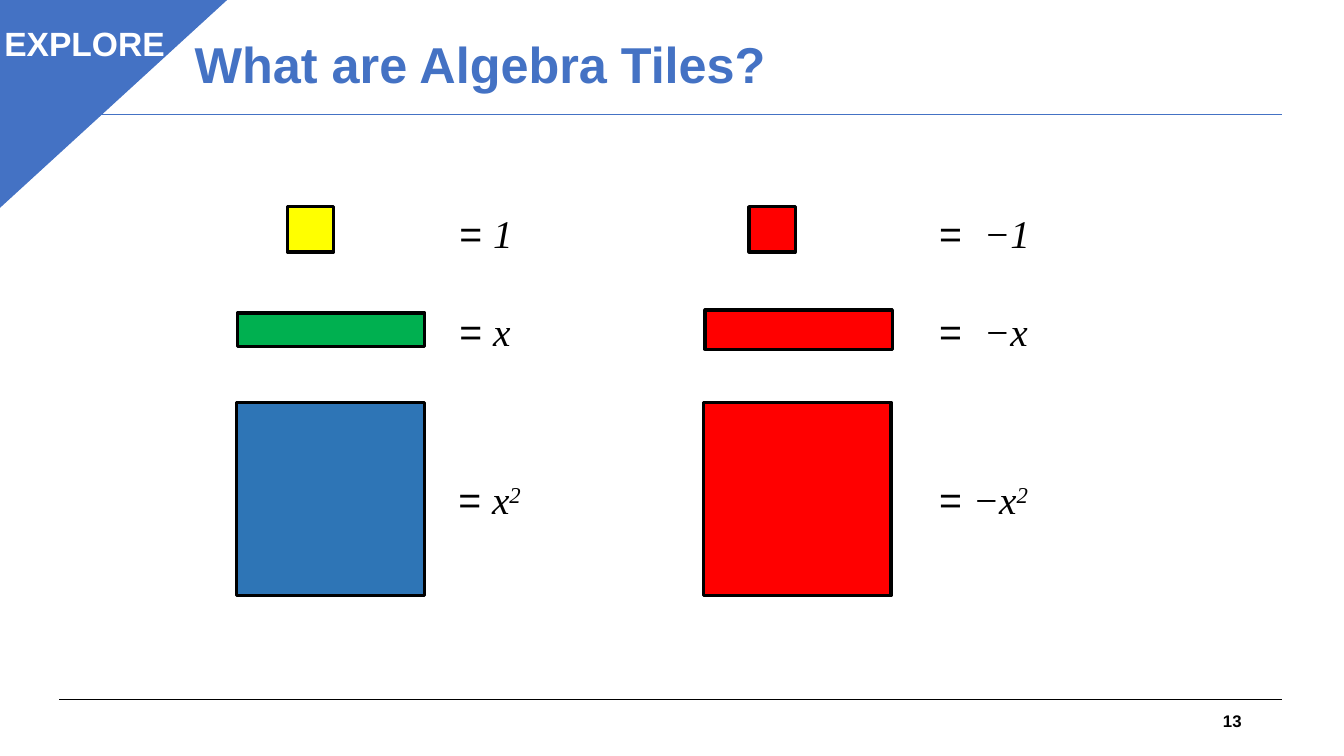
from lxml import etree
from pptx import Presentation
from pptx.dml.color import RGBColor
from pptx.enum import shapes, text
from pptx.oxml import ns
from pptx.util import Pt

COLORS = {
    "accent": "4472C4",
    "black": "000000",
    "white": "FFFFFF",
    "yellow": "FFFF00",
    "green": "00B050",
    "blue": "2E75B6",
    "red": "FF0000",
}
RECT = shapes.MSO_SHAPE.RECTANGLE
CORNER = shapes.MSO_SHAPE.RIGHT_TRIANGLE


def rgb(color):
    return RGBColor.from_string(COLORS[color])


def style_font(font, size, color, name=None, bold=None):
    font.size = Pt(size)
    font.color.rgb = rgb(color)
    font.name = name
    font.bold = bold


def add_rule(slide, left, right, y, color):
    rule = slide.shapes.add_connector(
        shapes.MSO_CONNECTOR.STRAIGHT, Pt(left), Pt(y), Pt(right), Pt(y))
    rule.line.color.rgb = rgb(color)
    rule.line.width = Pt(0.75)
    etree.SubElement(rule._element.spPr, ns.qn("a:effectLst"))


def add_block(slide, kind, box, fill, border, border_width):
    block = slide.shapes.add_shape(kind, *map(Pt, box))
    block.shadow.inherit = False
    block.fill.solid()
    block.fill.fore_color.rgb = rgb(fill)
    block.line.color.rgb = rgb(border)
    block.line.width = Pt(border_width)
    return block


def add_text_box(slide, box, anchor=text.MSO_ANCHOR.TOP):
    frame = slide.shapes.add_textbox(*map(Pt, box)).text_frame
    frame.word_wrap = True
    frame.vertical_anchor = anchor
    return frame.paragraphs[0]


def add_caption(slide, box, words, size, color, align, anchor=text.MSO_ANCHOR.TOP):
    caption = add_text_box(slide, box, anchor)
    caption.text = words
    caption.alignment = align
    style_font(caption.font, size, color, "Arial", True)


def add_value(slide, left, top, value, power, gap):
    equation = add_text_box(slide, (left, top, 96.5, 41))
    tabs = etree.SubElement(equation._p.get_or_add_pPr(), ns.qn("a:tabLst"))
    etree.SubElement(tabs, ns.qn("a:tab"), pos=str(Pt(gap)), algn="l")
    style_font(equation.font, 28, "black")
    equals = equation.add_run()
    equals.text = "=\t"
    equals.font.name = "Arial"
    for part, baseline in ((value, None), (power, "30000")):
        if part:
            term = equation.add_run()
            term.text = part
            term.font.name = "Times New Roman"
            term.font.italic = True
            if baseline:
                term._r.get_or_add_rPr().set("baseline", baseline)


def add_title(slide, words):
    title = slide.shapes.title
    title.left, title.top, title.width, title.height = map(Pt, (131.8, 8, 625.7, 80))
    frame = title.text_frame
    frame.text = words
    frame.auto_size = text.MSO_AUTO_SIZE.NONE
    frame.vertical_anchor = text.MSO_ANCHOR.MIDDLE
    heading = frame.paragraphs[0]
    heading.alignment = text.PP_ALIGN.LEFT
    heading.line_spacing = 0.9
    style_font(heading.font, 36, "accent", "Arial", True)


def main():
    deck = Presentation()
    deck.slide_width, deck.slide_height = Pt(960), Pt(540)
    slide = deck.slides.add_slide(deck.slide_layouts[5])

    add_rule(slide, 42.5, 916, 499.8, "black")
    add_rule(slide, 42.5, 916, 82, "accent")
    add_title(slide, "What are Algebra Tiles?")
    add_caption(slide, (678, 500.5, 216, 29), "13", 12, "black",
                text.PP_ALIGN.RIGHT, text.MSO_ANCHOR.MIDDLE)

    corner = add_block(slide, CORNER, (5, -8.4, 151, 165), "accent", "accent", 1)
    corner.rotation = 90
    add_caption(slide, (-5.8, 13, 132.5, 36), "EXPLORE", 24, "white",
                text.PP_ALIGN.CENTER)

    tiles = [
        ((205.2, 147.6, 33.1, 32.4), "yellow", 321.1, 146.2, "1", "", 24),
        ((535, 147.6, 33.1, 32.4), "red", 663.8, 146.2, "−1", "", 32),
        ((169.6, 223.6, 133.9, 23.8), "green", 321.1, 216, "x", "", 24),
        ((503.6, 221.4, 133.9, 28.1), "red", 663.8, 216, "−x", "", 32),
        ((169.2, 287.3, 133.9, 138.2), "blue", 320.4, 336.2, "x", "2", 24),
        ((502.6, 287.3, 133.9, 138.2), "red", 663.8, 336.2, "−x", "2", 24),
    ]
    for box, fill, left, top, value, power, gap in tiles:
        add_block(slide, RECT, box, fill, "black", 2.25)
        add_value(slide, left, top, value, power, gap)

    deck.save("out.pptx")


if __name__ == "__main__":
    main()
